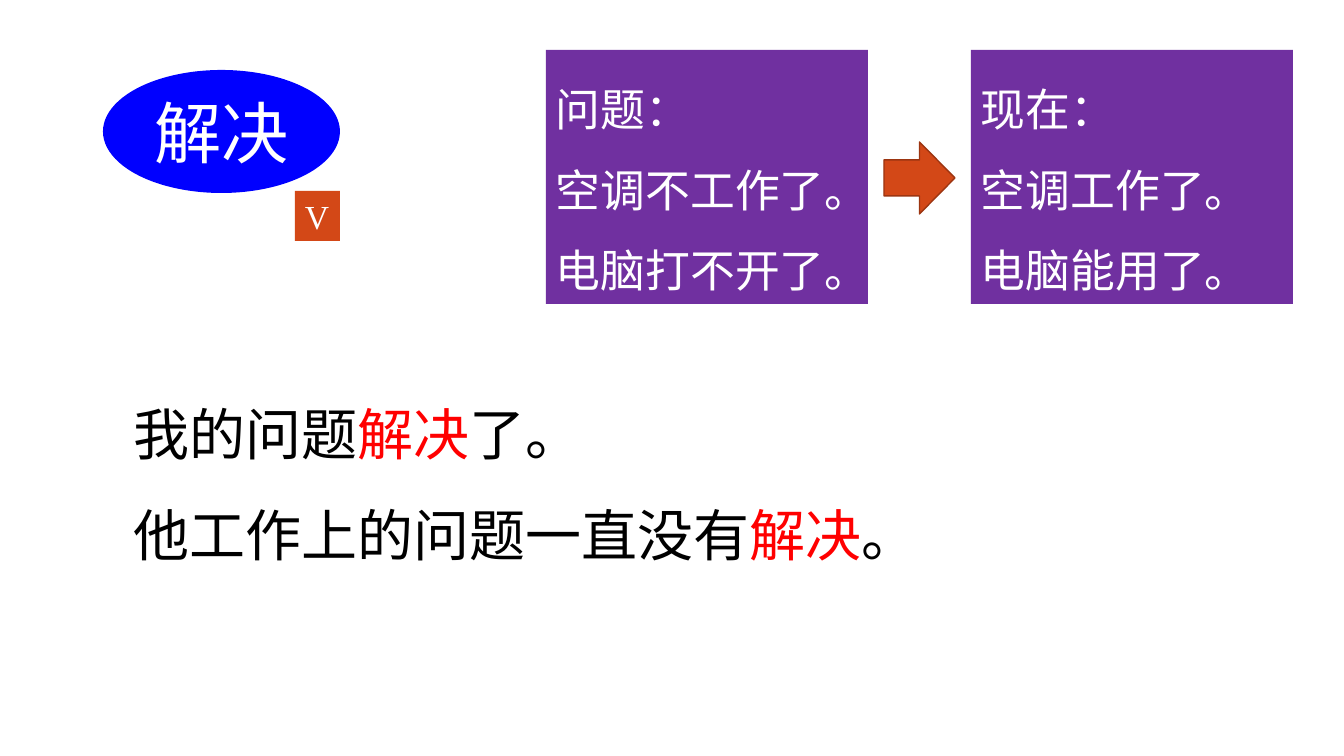
from lxml import etree
from pptx import Presentation
from pptx.dml.color import RGBColor
from pptx.enum.shapes import MSO_SHAPE
from pptx.enum.text import MSO_ANCHOR, MSO_AUTO_SIZE, PP_ALIGN
from pptx.oxml.ns import qn
from pptx.util import Emu, Pt

EMU_PER_PX = 914400 / 100.8

OVAL, RECTANGLE, ARROW = MSO_SHAPE.OVAL, MSO_SHAPE.RECTANGLE, MSO_SHAPE.RIGHT_ARROW
LEFT, CENTER = PP_ALIGN.LEFT, PP_ALIGN.CENTER
TOP, MIDDLE = MSO_ANCHOR.TOP, MSO_ANCHOR.MIDDLE
FIT_SHAPE = MSO_AUTO_SIZE.SHAPE_TO_FIT_TEXT

WHITE = RGBColor(0xFF, 0xFF, 0xFF)
BLACK = RGBColor(0x00, 0x00, 0x00)
RED = RGBColor(0xFF, 0x00, 0x00)
BLUE = RGBColor(0x00, 0x00, 0xFF)
PURPLE = RGBColor(0x70, 0x30, 0xA0)
ORANGE = RGBColor(0xD3, 0x48, 0x17)
DARK_ORANGE = RGBColor(0x9C, 0x35, 0x11)

CHINESE_FONT = "Noto Sans CJK SC"
LATIN_FONT = "Times New Roman"

WORD = "解决"
PANELS = [
    (546, ["问题：", "空调不工作了。", "电脑打不开了。"]),
    (971, ["现在：", "空调工作了。", "电脑能用了。"]),
]
SENTENCES = [("我的问题", "了。"), ("他工作上的问题一直没有", "。")]


def px(*lengths):
    return [Emu(round(length * EMU_PER_PX)) for length in lengths]


def style_paragraph(paragraph, size, font_name, color=None, align=LEFT, spacing=None):
    paragraph.alignment = align
    if spacing:
        paragraph.line_spacing = spacing
    font = paragraph.font
    font.size = Pt(size)
    font.name = font_name
    if color is not None:
        font.color.rgb = color
    # East Asian typeface follows the Latin one
    properties = paragraph._p.pPr.find(qn("a:defRPr"))
    etree.SubElement(properties, qn("a:ea")).set("typeface", CHINESE_FONT)


def add_filled_shape(slide, kind, box, fill, line=None):
    shape = slide.shapes.add_shape(kind, *px(*box))
    shape.shadow.inherit = False
    shape.fill.solid()
    shape.fill.fore_color.rgb = fill
    if line is None:
        shape.line.fill.background()
    else:
        shape.line.color.rgb = line
        shape.line.width = Pt(1)
    return shape


def write_lines(shape, lines, size, font_name, align=LEFT, anchor=TOP, spacing=None):
    frame = shape.text_frame
    frame.vertical_anchor = anchor
    frame.text = "\n".join(lines)
    for paragraph in frame.paragraphs:
        style_paragraph(paragraph, size, font_name, WHITE, align, spacing)


def add_sentences(slide, box, sentences):
    frame = slide.shapes.add_textbox(*px(*box)).text_frame
    frame.word_wrap = True
    frame.auto_size = FIT_SHAPE
    for index, (before, after) in enumerate(sentences):
        paragraph = frame.paragraphs[0] if index == 0 else frame.add_paragraph()
        style_paragraph(paragraph, 40, LATIN_FONT, spacing=1.5)
        for text, color in ((before, BLACK), (WORD, RED), (after, BLACK)):
            run = paragraph.add_run()
            run.text = text
            run.font.color.rgb = color


def main():
    presentation = Presentation()
    presentation.slide_width, presentation.slide_height = px(1344, 756)
    slide = presentation.slides.add_slide(presentation.slide_layouts[6])

    # Example sentences
    add_sentences(slide, (124, 361, 1184, 201), SENTENCES)

    # New word
    word = add_filled_shape(slide, OVAL, (103, 70, 237, 123), BLUE)
    write_lines(word, [WORD], 48, CHINESE_FONT, CENTER, MIDDLE)

    # Before and after panels
    for left, lines in PANELS:
        panel = add_filled_shape(slide, RECTANGLE, (left, 50, 322, 254), PURPLE)
        write_lines(panel, lines, 32, CHINESE_FONT, spacing=1.5)
        panel.text_frame.auto_size = FIT_SHAPE
    add_filled_shape(slide, ARROW, (884, 142, 71, 72), ORANGE, DARK_ORANGE)

    # Part of speech
    tag = add_filled_shape(slide, RECTANGLE, (295, 191, 45, 50), ORANGE)
    write_lines(tag, ["V"], 24, LATIN_FONT)
    tag.text_frame.word_wrap = False
    tag.text_frame.auto_size = FIT_SHAPE

    presentation.save("out.pptx")


if __name__ == "__main__":
    main()
